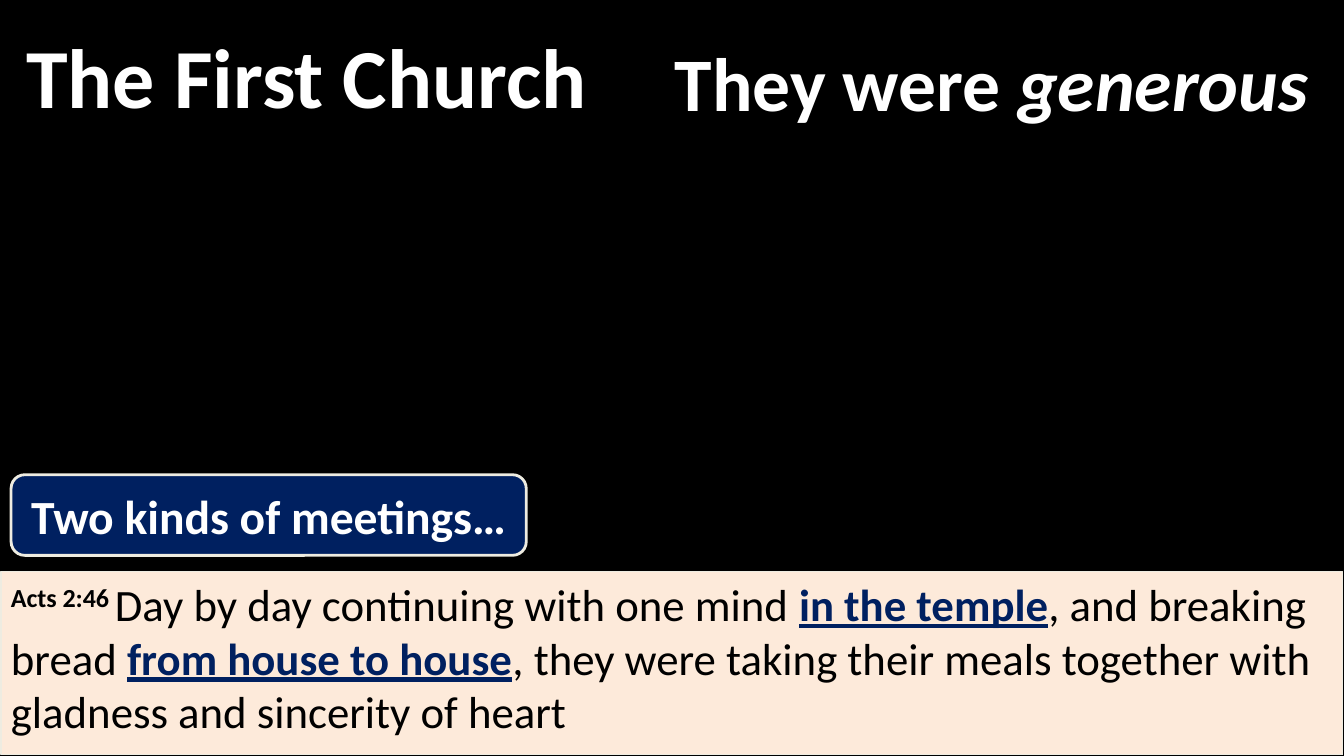
import pptx
import pptx.util
import pptx.dml.color
import pptx.enum.shapes
import pptx.enum.text

PX = 9144
CREAM, NAVY, WHITE, BLACK, IVORY = "FDEADA", "002060", "FFFFFF", "000000", "EEECE1"
RECTANGLE = pptx.enum.shapes.MSO_SHAPE.RECTANGLE
CALLOUT = pptx.enum.shapes.MSO_SHAPE.ROUNDED_RECTANGULAR_CALLOUT
CENTER = pptx.enum.text.PP_ALIGN.CENTER
LEFT = pptx.enum.text.PP_ALIGN.LEFT
MIDDLE = pptx.enum.text.MSO_ANCHOR.MIDDLE
TOP = pptx.enum.text.MSO_ANCHOR.TOP


def color(value):
    return pptx.dml.color.RGBColor.from_string(value)


def add_text(paragraph, text, size, ink=WHITE, bold=True, italic=False, underline=False, superscript=False):
    run = paragraph.add_run()
    run.text = text
    run.font.name = "Calibri"
    run.font.size = pptx.util.Pt(size)
    run.font.color.rgb = color(ink)
    run.font.bold = bold
    run.font.italic = italic
    run.font.underline = underline
    if superscript:
        run._r.get_or_add_rPr().set("baseline", "30000")


presentation = pptx.Presentation()
presentation.slide_width = 1333 * PX
presentation.slide_height = 750 * PX
slide = presentation.slides.add_slide(presentation.slide_layouts[6])
slide.background.fill.solid()
slide.background.fill.fore_color.rgb = color(BLACK)

plain = {"ink": BLACK, "bold": False}
place = {"ink": NAVY, "underline": True}
verse = [
    ("Acts 2:46 ", {"ink": BLACK, "superscript": True}),
    ("Day by day continuing with one mind ", plain),
    ("in the temple", place),
    (", and breaking bread ", plain),
    ("from house to house", place),
    (", they were taking their meals together with gladness and sincerity of heart", plain),
]
boxes = [
    (RECTANGLE, (1, 567, 1331, 182), CREAM, 0.75, 32, verse),
    (CALLOUT, (0, 33, 608, 83), None, 0, 60, [("The First Church", {})]),
    (CALLOUT, (650, 39, 667, 84), None, 0, 54, [("They were ", {}), ("generous", {"italic": True})]),
    (CALLOUT, (11, 471, 511, 80), NAVY, 2, 34, [("Two kinds of meetings…", {})]),
]

for kind, bounds, fill, line_width, size, runs in boxes:
    shape = slide.shapes.add_shape(kind, *[length * PX for length in bounds])
    shape.shadow.inherit = False
    if fill:
        shape.fill.solid()
        shape.fill.fore_color.rgb = color(fill)
        shape.line.color.rgb = color(IVORY)
        shape.line.width = pptx.util.Pt(line_width)
    else:
        shape.fill.background()
        shape.line.fill.background()
    if kind == CALLOUT:
        for index, value in enumerate((-0.22, 0.5, 0.17)):
            shape.adjustments[index] = value
    frame = shape.text_frame
    frame.word_wrap = True
    frame.vertical_anchor = MIDDLE if kind == CALLOUT else TOP
    paragraph = frame.paragraphs[0]
    paragraph.alignment = CENTER if kind == CALLOUT else LEFT
    for text, style in runs:
        add_text(paragraph, text, size, **style)

presentation.save("out.pptx")
